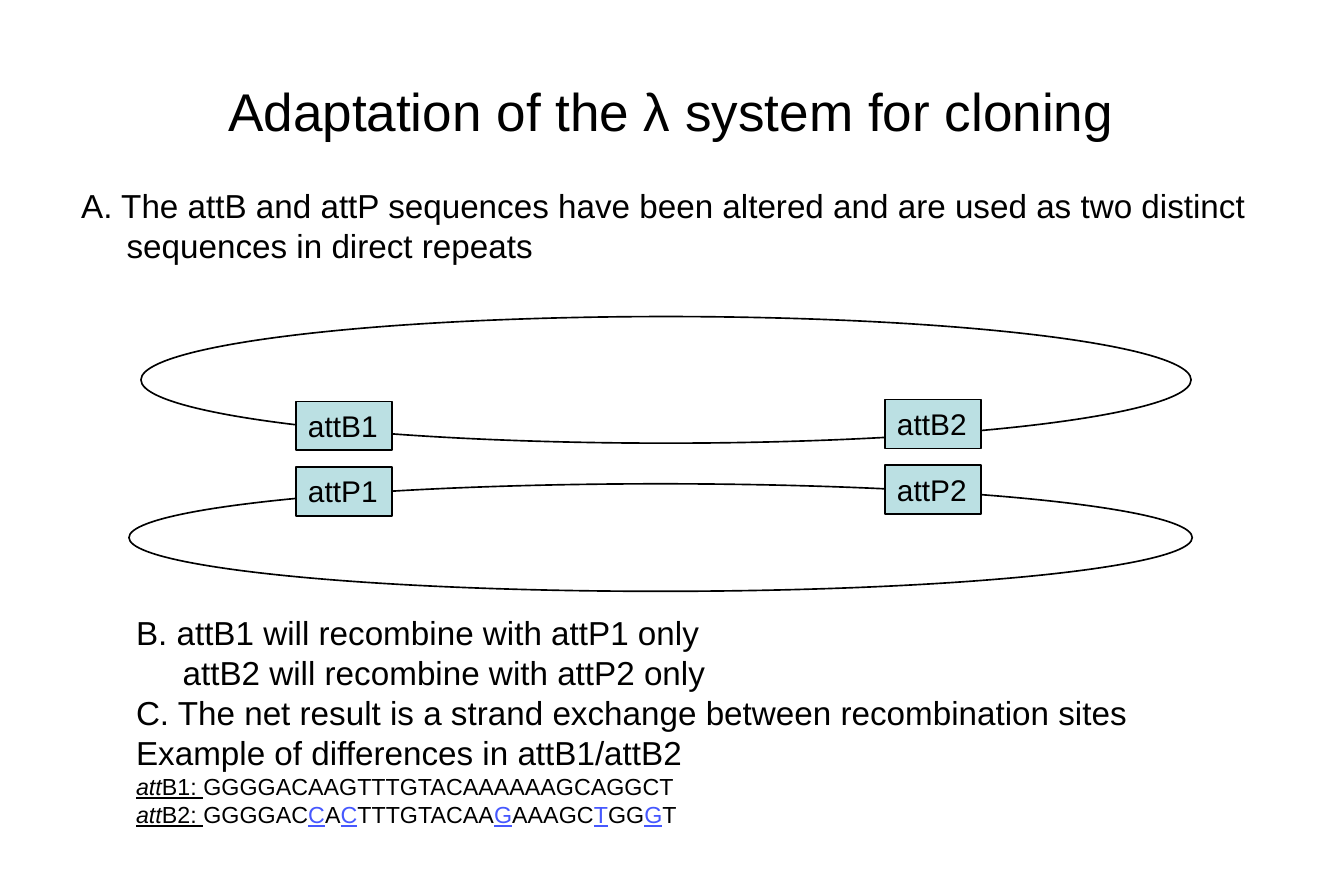
"""Build a slide on adapting the lambda recombination system for cloning."""
import itertools

import pptx
import pptx.dml.color
import pptx.enum.shapes
import pptx.enum.text
import pptx.oxml
import pptx.oxml.ns
import pptx.util

Inches = pptx.util.Inches
Pt = pptx.util.Pt
BLACK, SITE_FILL, CHANGED_BASE = "000000", "BBE0E3", "4658FE"
ATTB1 = "GGGGACAAGTTTGTACAAAAAAGCAGGCT"
ATTB2 = "GGGGACCACTTTGTACAAGAAAGCTGGGT"


def rgb(value):
    """Turn a hex string into a colour."""
    return pptx.dml.color.RGBColor.from_string(value)


def write(paragraph, text, size=20, color=BLACK, italic=False, underline=False):
    """Append one formatted run to a paragraph."""
    run = paragraph.add_run()
    run.text = text
    run.font.name = "Arial"
    run.font.size = Pt(size)
    run.font.color.rgb = rgb(color)
    run.font.italic = italic
    run.font.underline = underline


def set_indent(paragraph, left, first=0):
    """Set a paragraph's left margin and first-line indent, without a bullet."""
    properties = paragraph._p.get_or_add_pPr()
    properties.set("marL", str(Inches(left)))
    properties.set("indent", str(Inches(first)))
    properties.append(pptx.oxml.parse_xml(
        f"<a:buNone {pptx.oxml.ns.nsdecls('a')}/>"))


def place(part, box):
    """Move a shape to a box of left, top, width and height in inches."""
    part.left, part.top, part.width, part.height = map(Inches, box)


def fill_heading(title, box):
    """Write the slide title in its placeholder."""
    place(title, box)
    frame = title.text_frame
    frame.auto_size = pptx.enum.text.MSO_AUTO_SIZE.NONE
    frame.vertical_anchor = pptx.enum.text.MSO_ANCHOR.MIDDLE
    heading = frame.paragraphs[0]
    heading.alignment = pptx.enum.text.PP_ALIGN.CENTER
    write(heading, "Adaptation of the λ system for cloning", size=32)


def fill_point_a(body, box):
    """Write point A in the body placeholder with a hanging indent."""
    place(body, box)
    body.text_frame.auto_size = pptx.enum.text.MSO_AUTO_SIZE.NONE
    point = body.text_frame.paragraphs[0]
    set_indent(point, 0.38, -0.38)
    point.space_before = Pt(4)
    write(point, "A. The attB and attP sequences have been altered and are "
                 "used as two distinct sequences in direct repeats")


def add_outlined(slide, kind, box, fill=None):
    """Add a black-outlined preset shape, hollow unless a fill is given."""
    outlined = slide.shapes.add_shape(kind, *map(Inches, box))
    outlined.shadow.inherit = False
    outlined.line.color.rgb = rgb(BLACK)
    outlined.line.width = Pt(1)
    if fill:
        outlined.fill.solid()
        outlined.fill.fore_color.rgb = rgb(fill)
    else:
        outlined.fill.background()
    return outlined


def add_site(slide, label, box):
    """Add one labelled attachment site."""
    site = add_outlined(slide, pptx.enum.shapes.MSO_SHAPE.RECTANGLE, box, SITE_FILL)
    frame = site.text_frame
    frame.word_wrap = False
    frame.auto_size = pptx.enum.text.MSO_AUTO_SIZE.SHAPE_TO_FIT_TEXT
    frame.vertical_anchor = pptx.enum.text.MSO_ANCHOR.TOP
    frame.paragraphs[0].alignment = pptx.enum.text.PP_ALIGN.LEFT
    write(frame.paragraphs[0], label, size=18)


def add_plasmids(slide, box):
    """Draw the two circular DNAs and their facing attachment sites."""
    left, top, width, height = box
    oval = pptx.enum.shapes.MSO_SHAPE.OVAL
    add_outlined(slide, oval, (left, top + height - 0.9, width, 0.9))
    add_outlined(slide, oval, (left + 0.1, top, width - 0.11, 1.06))
    for row, kind in enumerate(("attB", "attP")):
        for column in range(2):
            site_box = (left + 1.4 + 4.93 * column,
                        top + 0.71 + 0.55 * row - 0.015 * column, 0.8, 0.41)
            add_site(slide, f"{kind}{column + 1}", site_box)


def write_sequence(paragraph, name, sequence, reference):
    """Write a named sequence, marking the bases that differ from a reference."""
    write(paragraph, "att", size=14, italic=True, underline=True)
    write(paragraph, f"{name}: ", size=14, underline=True)
    pairs = zip(sequence, reference)
    for changed, group in itertools.groupby(pairs, lambda pair: pair[0] != pair[1]):
        write(paragraph, "".join(base for base, _ in group), size=14,
              color=CHANGED_BASE if changed else BLACK, underline=changed)


def add_results(slide, box):
    """Add points B and C and the example sequences."""
    frame = slide.shapes.add_textbox(*map(Inches, box)).text_frame
    frame.word_wrap = True
    frame.auto_size = pptx.enum.text.MSO_AUTO_SIZE.SHAPE_TO_FIT_TEXT
    points = (
        ("B. attB1 will recombine with attP1 only", 0),
        ("attB2 will recombine with attP2 only", 0.39),
        ("C. The net result is a strand exchange between recombination sites", 0),
        ("Example of differences in attB1/attB2", 0),
    )
    for number, (point, indent) in enumerate(points):
        paragraph = frame.add_paragraph() if number else frame.paragraphs[0]
        set_indent(paragraph, indent)
        write(paragraph, point)
    for name, sequence in (("B1", ATTB1), ("B2", ATTB2)):
        write_sequence(frame.add_paragraph(), name, sequence, ATTB1)


def main():
    """Build and save the slide."""
    deck = pptx.Presentation()
    deck.slide_width, deck.slide_height = Inches(11.25), Inches(7.5)
    slide = deck.slides.add_slide(deck.slide_layouts[1])
    fill_heading(slide.shapes.title, (0.56, 0.3, 10.12, 1.25))
    fill_point_a(slide.placeholders[1], (0.58, 1.5, 10.12, 1))
    add_plasmids(slide, (1.08, 2.65, 8.9, 2.3))
    add_results(slide, (1.04, 5.08, 8.75, 1.92))
    deck.save("out.pptx")


if __name__ == "__main__":
    main()
